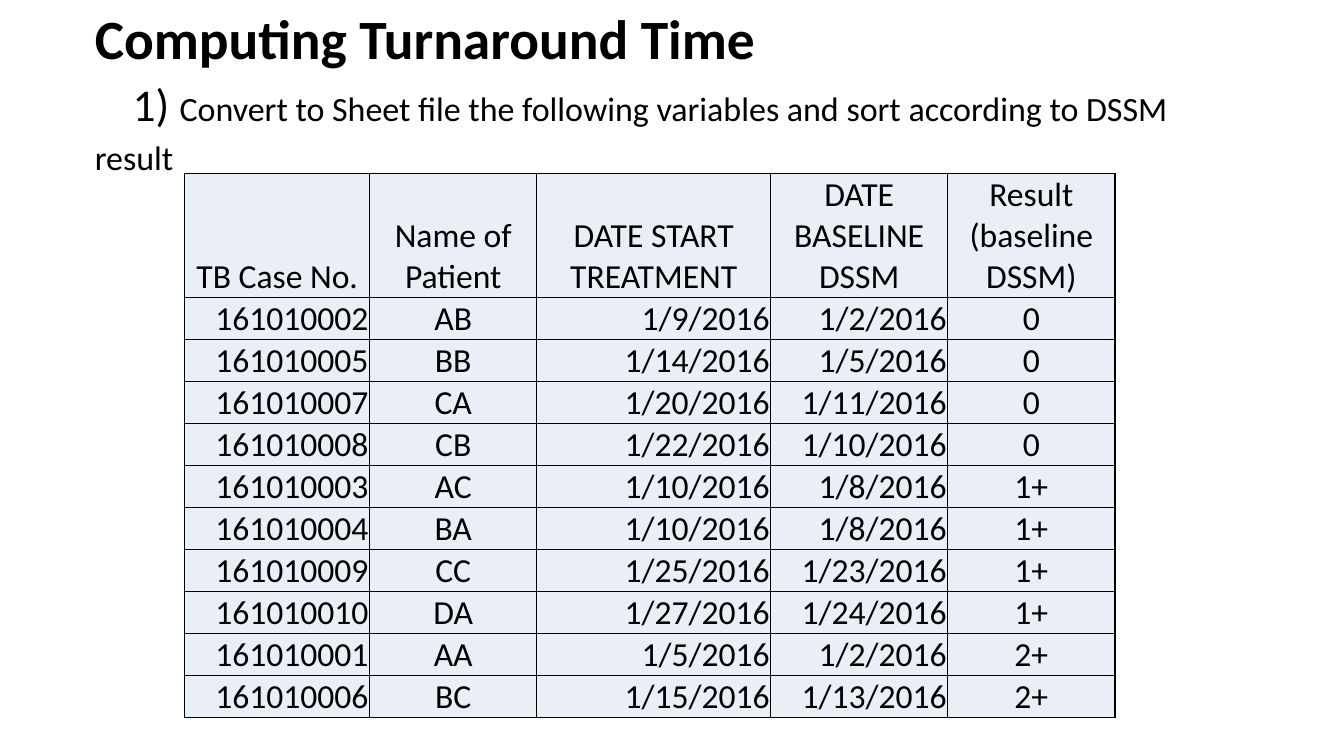
from dataclasses import dataclass

from lxml.etree import SubElement
from pptx import Presentation
from pptx.dml.color import RGBColor as Rgb
from pptx.enum.text import MSO_ANCHOR as Anchor, MSO_AUTO_SIZE as AutoSize, PP_ALIGN as Align
from pptx.oxml.ns import qn
from pptx.util import Pt

# Content
HEADING = "Computing Turnaround Time"
STEP_NUMBER = "1) "
STEP_TEXT = "Convert to Sheet file the following variables and sort according to DSSM result"
HEADERS = ("TB Case No.", "Name of Patient", "DATE START TREATMENT",
           "DATE BASELINE DSSM", "Result (baseline DSSM)")
PATIENTS = [
    ("161010002", "AB", "1/9/2016", "1/2/2016", "0"),
    ("161010005", "BB", "1/14/2016", "1/5/2016", "0"),
    ("161010007", "CA", "1/20/2016", "1/11/2016", "0"),
    ("161010008", "CB", "1/22/2016", "1/10/2016", "0"),
    ("161010003", "AC", "1/10/2016", "1/8/2016", "1+"),
    ("161010004", "BA", "1/10/2016", "1/8/2016", "1+"),
    ("161010009", "CC", "1/25/2016", "1/23/2016", "1+"),
    ("161010010", "DA", "1/27/2016", "1/24/2016", "1+"),
    ("161010001", "AA", "1/5/2016", "1/2/2016", "2+"),
    ("161010006", "BC", "1/15/2016", "1/13/2016", "2+"),
]
COLUMN_WIDTHS = (132, 119.5, 167, 126.5, 119.5)
COLUMN_ALIGNS = (Align.RIGHT, Align.CENTER, Align.RIGHT, Align.RIGHT, Align.CENTER)
HEADER_HEIGHT, ROW_HEIGHT = 88.5, 30


@dataclass(frozen=True)
class Theme:
    font: str = "Calibri"
    ink: str = "000000"
    cell: str = "EAEFF7"
    heading: float = 39.6
    number: float = 32.4
    step: float = 24.3
    table: float = 24


THEME = Theme()


def add_run(para, text, size, bold=False):
    span = para.add_run()
    span.text = text
    span.font.name, span.font.size, span.font.bold = THEME.font, Pt(size), bold
    span.font.color.rgb = Rgb.from_string(THEME.ink)


def add_borders(cell):
    properties = cell._tc.get_or_add_tcPr()
    for position, side in enumerate(("a:lnL", "a:lnR", "a:lnT", "a:lnB")):
        line = SubElement(properties, qn(side), w=str(Pt(1)))
        fill = SubElement(line, qn("a:solidFill"))
        SubElement(fill, qn("a:srgbClr"), val=THEME.ink)
        properties.insert(position, line)  # borders come before the fill


def fill_cell(cell, text, align):
    cell.fill.solid()
    cell.fill.fore_color.rgb = Rgb.from_string(THEME.cell)
    cell.margin_left = cell.margin_right = cell.margin_top = Pt(0.7)
    cell.margin_bottom = Pt(0)
    cell.vertical_anchor = Anchor.BOTTOM
    para = cell.text_frame.paragraphs[0]
    para.alignment = align
    add_run(para, text, THEME.table)
    add_borders(cell)


def add_title(page):
    box = page.shapes.title
    box.left, box.top, box.width, box.height = Pt(60.5), Pt(27.4), Pt(828), Pt(82)
    frame = box.text_frame
    frame.word_wrap, frame.auto_size = True, AutoSize.NONE
    frame.vertical_anchor = Anchor.MIDDLE
    heading, step = frame.paragraphs[0], frame.add_paragraph()
    for para in (heading, step):
        para.alignment, para.line_spacing = Align.LEFT, 0.9
        para.space_before = Pt(0)
    add_run(heading, HEADING, THEME.heading, bold=True)

    # Numbered step with a first-line indent
    step.space_before = Pt(8)
    step._p.get_or_add_pPr().set("indent", str(Pt(27)))
    add_run(step, STEP_NUMBER, THEME.number)
    add_run(step, STEP_TEXT, THEME.step)
    add_run(step, " ", THEME.number)


def add_patient_table(page):
    height = HEADER_HEIGHT + ROW_HEIGHT * len(PATIENTS)
    table = page.shapes.add_table(len(PATIENTS) + 1, len(HEADERS), Pt(132), Pt(123.8),
                                  Pt(sum(COLUMN_WIDTHS)), Pt(height)).table
    for column, width in zip(table.columns, COLUMN_WIDTHS):
        column.width = Pt(width)
    for index, values in enumerate([HEADERS, *PATIENTS]):
        table.rows[index].height = Pt(ROW_HEIGHT if index else HEADER_HEIGHT)
        aligns = COLUMN_ALIGNS if index else [Align.CENTER] * len(HEADERS)
        for cell, text, align in zip(table.rows[index].cells, values, aligns):
            fill_cell(cell, text, align)


def main():
    deck = Presentation()
    deck.slide_width, deck.slide_height = Pt(960), Pt(540)
    page = deck.slides.add_slide(deck.slide_layouts[5])
    add_title(page)
    add_patient_table(page)
    deck.save("out.pptx")


if __name__ == "__main__":
    main()
